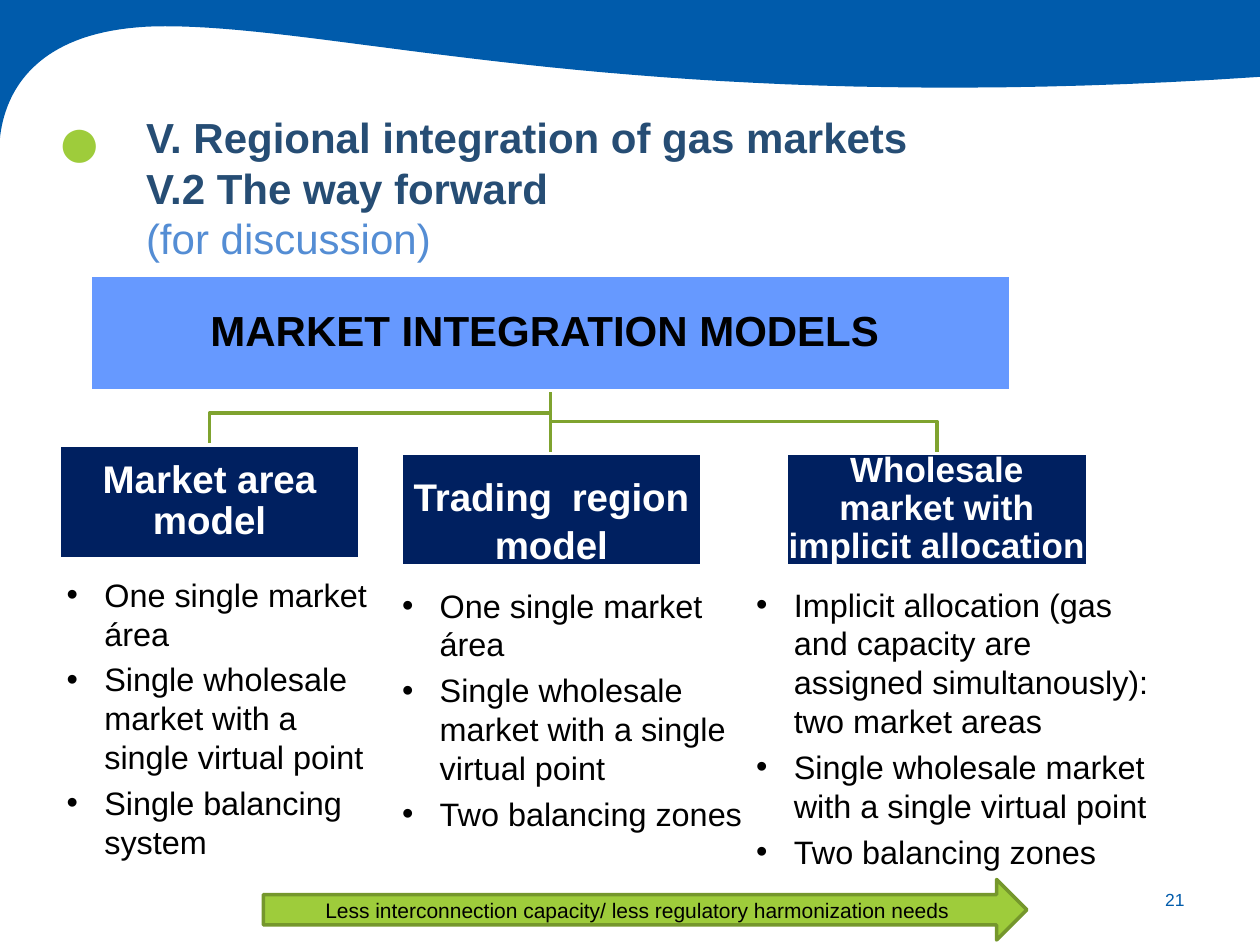
from lxml.etree import SubElement
from pptx import Presentation
from pptx.dml.color import RGBColor
from pptx.enum.shapes import MSO_CONNECTOR, MSO_SHAPE
from pptx.enum.text import MSO_ANCHOR, MSO_AUTO_SIZE, PP_ALIGN
from pptx.oxml.ns import qn
from pptx.util import Cm, Pt

BLUE = RGBColor(0x00, 0x5B, 0xAB)
GREEN = RGBColor(0x9E, 0xCC, 0x3B)
DARK_GREEN = RGBColor(0x75, 0x97, 0x2C)
BRANCH_GREEN = RGBColor(0x7F, 0xA3, 0x2F)
TITLE_BLUE = RGBColor(0x26, 0x4D, 0x74)
SUBTITLE_BLUE = RGBColor(0x54, 0x8D, 0xD4)
LIGHT_BLUE = RGBColor(0x66, 0x99, 0xFF)
NAVY = RGBColor(0x00, 0x20, 0x60)
WHITE = RGBColor(0xFF, 0xFF, 0xFF)
BLACK = RGBColor(0x00, 0x00, 0x00)

SLIDE_WIDTH, SLIDE_HEIGHT = 25.4, 19.05
ROOT_CENTER, ROOT_BOTTOM = 11.1, 7.87
CARD_WIDTH = 6.07
BRANCH_HEIGHT = 0.64
WAVE_CURVES = [
    [(25.4, 1.55), (12.95, 2.39), (7.01, 0.53), (3.33, 0.53)],
    [(3.33, 0.53), (0.58, 0.53), (0.08, 2.01), (0, 2.79)],
]
SHARED_POINTS = [
    "One single market área",
    "Single wholesale market with a single virtual point",
]
MODELS = [
    {
        "card": (1.19, 8.97, 2.29),
        "heading": [("Market area model", 22, True)],
        "list": (1.09, 11.46, 7.01, 5.72),
        "points": SHARED_POINTS + ["Single balancing system"],
    },
    {
        "card": (8.08, 9.14, 2.26),
        "heading": [("Trading", 22, True), (" ", 40, False), ("region model", 22, True)],
        "list": (7.85, 11.68, 7.42, 6.22),
        "points": SHARED_POINTS + ["Two balancing zones"],
    },
    {
        "card": (15.85, 9.14, 2.26),
        "heading": [("Wholesale market with implicit allocation", 20, True)],
        "list": (14.99, 11.66, 8.71, 6.22),
        "points": [
            "Implicit allocation (gas and capacity are assigned simultanously): two market areas",
            SHARED_POINTS[1],
            "Two balancing zones",
        ],
    },
]


def write_text(paragraph, text, size=18.5, color=BLACK, bold=False,
               align=PP_ALIGN.LEFT, line_spacing=1.0):
    paragraph.alignment = align
    paragraph.line_spacing = line_spacing
    run = paragraph.add_run()
    run.text = text
    run.font.name = "Arial"
    run.font.size = Pt(size)
    run.font.bold = bold
    run.font.color.rgb = color


def prepare_frame(shape, anchor=MSO_ANCHOR.TOP, inset=None):
    frame = shape.text_frame
    frame.word_wrap = True
    frame.auto_size = MSO_AUTO_SIZE.NONE
    frame.vertical_anchor = anchor
    if inset is not None:
        frame.margin_left = frame.margin_right = Cm(inset)
        frame.margin_top = frame.margin_bottom = Cm(inset)
    return frame


def place(shape, left, top, width, height):
    shape.left, shape.top = Cm(left), Cm(top)
    shape.width, shape.height = Cm(width), Cm(height)


def list_paragraphs(frame, count):
    return [frame.paragraphs[0]] + [frame.add_paragraph() for _ in range(count - 1)]


def curve_points(start, first, second, end, steps=40):
    for step in range(1, steps + 1):
        t = step / steps
        weights = ((1 - t) ** 3, 3 * t * (1 - t) ** 2, 3 * t * t * (1 - t), t ** 3)
        yield tuple(sum(weight * point[axis] for weight, point
                        in zip(weights, (start, first, second, end))) for axis in (0, 1))


def add_outline(slide, points, close):
    corners = [(Cm(x), Cm(y)) for x, y in points]
    builder = slide.shapes.build_freeform(*corners[0])
    builder.add_line_segments(corners[1:], close=close)
    shape = builder.convert_to_shape()
    shape.shadow.inherit = False
    return shape


def add_wave(slide):
    points = [(0, 0), (SLIDE_WIDTH, 0), WAVE_CURVES[0][0]]
    for curve in WAVE_CURVES:
        points.extend(curve_points(*curve))
    wave = add_outline(slide, points, close=True)
    wave.fill.solid()
    wave.fill.fore_color.rgb = BLUE
    wave.line.fill.background()


def add_branch(slide, card_center, card_top):
    if abs(card_center - ROOT_CENTER) < 0.1:
        branch = slide.shapes.add_connector(
            MSO_CONNECTOR.STRAIGHT, Cm(ROOT_CENTER), Cm(ROOT_BOTTOM),
            Cm(ROOT_CENTER), Cm(card_top))
        SubElement(branch.element.spPr, qn("a:effectLst"))
    else:
        bend = card_top - BRANCH_HEIGHT
        branch = add_outline(slide, [
            (ROOT_CENTER, ROOT_BOTTOM), (ROOT_CENTER, bend),
            (card_center, bend), (card_center, card_top)], close=False)
        branch.fill.background()
    branch.line.color.rgb = BRANCH_GREEN
    branch.line.width = Pt(2)


def add_box(slide, kind, position, fill, line, runs, color, line_spacing, inset=None):
    box = slide.shapes.add_shape(kind, *map(Cm, position))
    box.shadow.inherit = False
    box.fill.solid()
    box.fill.fore_color.rgb = fill
    box.line.color.rgb = line
    box.line.width = Pt(2)
    paragraph = prepare_frame(box, MSO_ANCHOR.MIDDLE, inset).paragraphs[0]
    for text, size, bold in runs:
        write_text(paragraph, text, size=size, color=color, bold=bold,
                   align=PP_ALIGN.CENTER, line_spacing=line_spacing)


def add_label(slide, position, text, anchor, **text_format):
    label = slide.shapes.add_textbox(*map(Cm, position))
    write_text(prepare_frame(label, anchor).paragraphs[0], text, **text_format)


def fill_title(title):
    place(title, 2.69, 2.13, 16, 4.37)
    lines = [
        ("V. Regional integration of gas markets", TITLE_BLUE, True),
        ("V.2 The way forward", TITLE_BLUE, True),
        ("(for discussion)", SUBTITLE_BLUE, False),
    ]
    paragraphs = list_paragraphs(prepare_frame(title), len(lines))
    for paragraph, (text, color, bold) in zip(paragraphs, lines):
        write_text(paragraph, text, size=24, color=color, bold=bold)


def fill_list(placeholder, position, points):
    place(placeholder, *position)
    paragraphs = list_paragraphs(prepare_frame(placeholder), len(points))
    for index, (paragraph, text) in enumerate(zip(paragraphs, points)):
        properties = paragraph._p.get_or_add_pPr()
        properties.set("marL", str(Cm(0.76)))
        properties.set("indent", str(-Cm(0.76)))
        SubElement(properties, qn("a:buFont"), typeface="Arial")
        SubElement(properties, qn("a:buChar"), char="•")
        paragraph.space_before = Pt(4 if index else 0)
        write_text(paragraph, text)


def main():
    presentation = Presentation()
    presentation.slide_width = Cm(SLIDE_WIDTH)
    presentation.slide_height = Cm(SLIDE_HEIGHT)
    slide = presentation.slides.add_slide(presentation.slide_layouts.get_by_name("Comparison"))
    title, first_list, second_list, spare, third_list = slide.placeholders
    spare.element.getparent().remove(spare.element)

    add_wave(slide)
    fill_title(title)
    add_label(slide, (0.89, 1.45, 1.4, 2.39), "●", MSO_ANCHOR.BOTTOM,
              size=44, color=GREEN, align=PP_ALIGN.CENTER)
    add_label(slide, (22.71, 17.63, 1.42, 1.02), "21", MSO_ANCHOR.MIDDLE,
              size=10, color=BLUE, align=PP_ALIGN.RIGHT)

    for model in MODELS:
        left, top, _ = model["card"]
        add_branch(slide, left + CARD_WIDTH / 2, top)
    add_box(slide, MSO_SHAPE.RECTANGLE, (1.83, 5.54, 18.54, 2.33), LIGHT_BLUE, WHITE,
            [("MARKET INTEGRATION MODELS ", 24, True)], BLACK, 0.9, inset=0.04)
    for model, placeholder in zip(MODELS, (first_list, second_list, third_list)):
        left, top, height = model["card"]
        add_box(slide, MSO_SHAPE.RECTANGLE, (left, top, CARD_WIDTH, height), NAVY, WHITE,
                model["heading"], WHITE, 0.9, inset=0.03)
        fill_list(placeholder, model["list"], model["points"])
    add_box(slide, MSO_SHAPE.RIGHT_ARROW, (5.31, 17.73, 15.39, 1.22), GREEN, DARK_GREEN,
            [("Less interconnection capacity/ less regulatory harmonization needs", 12, False)],
            BLACK, 1.0)
    presentation.save("out.pptx")


if __name__ == "__main__":
    main()
